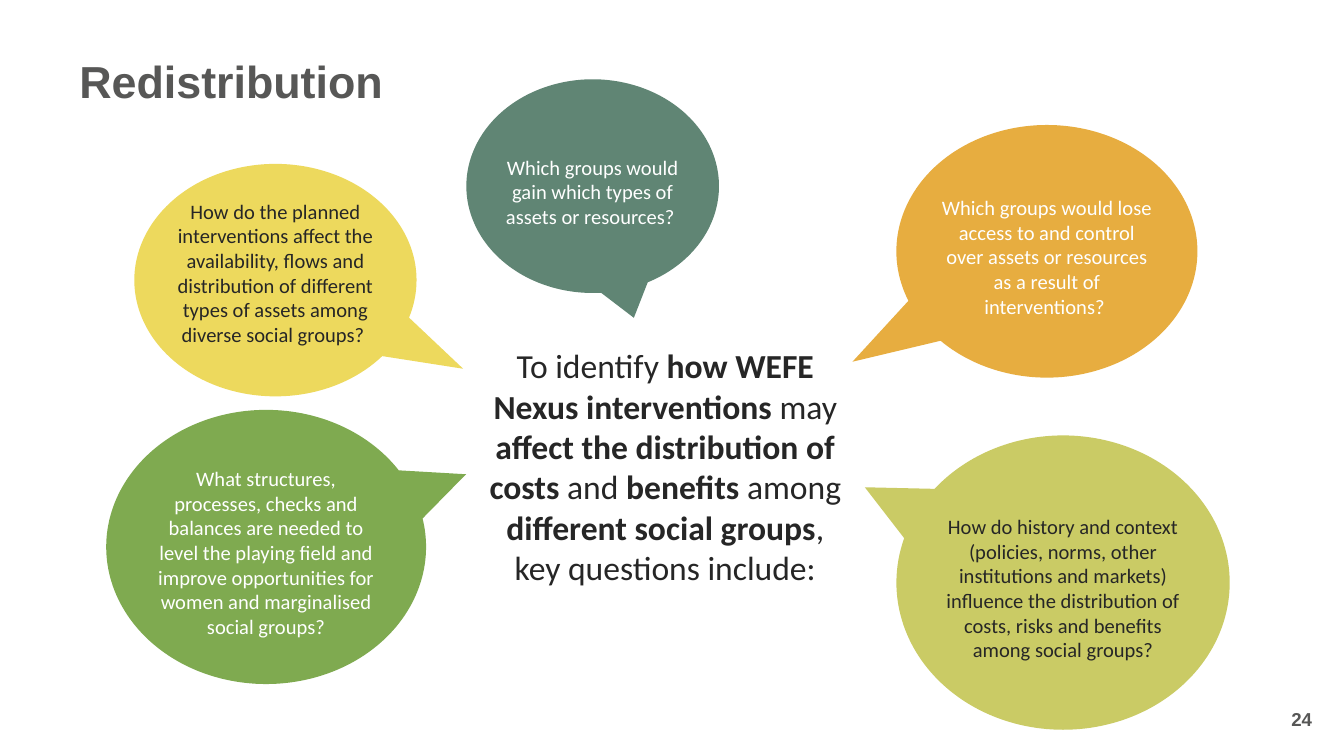
from pptx import Presentation
from pptx.dml.color import RGBColor
from pptx.enum import shapes, text
from pptx.util import Inches, Pt

GREY = RGBColor(0x57, 0x57, 0x56)
DARK = RGBColor(0x26, 0x26, 0x26)
WHITE = RGBColor(0xFF, 0xFF, 0xFF)
GREEN = RGBColor(0x7F, 0xAA, 0x50)
YELLOW = RGBColor(0xED, 0xD9, 0x5D)
TEAL = RGBColor(0x60, 0x85, 0x74)
ORANGE = RGBColor(0xE7, 0xAD, 0x40)
LIME = RGBColor(0xCA, 0xCB, 0x65)

MID = text.MSO_ANCHOR.MIDDLE
TOP = text.MSO_ANCHOR.TOP
LEFT, CENTER, RIGHT = text.PP_ALIGN.LEFT, text.PP_ALIGN.CENTER, text.PP_ALIGN.RIGHT


def place(shape, box):
    for side, size in zip(("left", "top", "width", "height"), box):
        setattr(shape, side, Inches(size))


def write(shape, runs, align, anchor, color, font):
    """Fill a shape with one paragraph of (words, bold) runs."""
    frame = shape.text_frame
    frame.word_wrap = True
    frame.vertical_anchor = anchor
    para = frame.paragraphs[0]
    para.alignment = align
    for words, bold in runs:
        run = para.add_run()
        run.text = words
        run.font.color.rgb = color
        for key, value in {**font, "bold": bold}.items():
            setattr(run.font, key, value)
    return para


# Widescreen 16:9 slide
prs = Presentation()
prs.slide_width = Inches(10)
prs.slide_height = Inches(10 * 9 / 16)
slide = prs.slides.add_slide(prs.slide_layouts[5])

# Title
title = slide.shapes.title
place(title, (0.49, 0.32, 9.37, 0.6))
para = write(title, [("Redistribution", True)], LEFT, MID, GREY,
             {"name": "Arial", "size": Pt(24)})
para.line_spacing = 0.95

# Slide number
num = slide.shapes.add_textbox(0, 0, 0, 0)
place(num, (7.61, 5.2, 2.25, 0.3))
write(num, [("24", True)], RIGHT, MID, GREY, {"name": "Arial", "size": Pt(10)})

# Central statement
core = slide.shapes.add_textbox(0, 0, 0, 0)
place(core, (3.49, 2.52, 2.92, 1.92))
write(core, [
    ("To identify ", False),
    ("how WEFE Nexus interventions", True),
    (" may ", False),
    ("affect the distribution of costs ", True),
    ("and ", False),
    ("benefits", True),
    (" among ", False),
    ("different social groups", True),
    (", key questions include:", False),
], CENTER, TOP, DARK, {"name": "Calibri", "size": Pt(18)})

# Question bubbles: box, pointer tip, fill, text colour, bottom inset, words
bubbles = [
    ((0.79, 3.05, 2.38, 2.04), (0.625, -0.265), GREEN, WHITE, 0,
     "What structures, processes, checks and balances are needed to level the "
     "playing field and improve opportunities for women and marginalised "
     "social groups?"),
    ((1, 1.22, 2.1, 1.73), (0.665, 0.381), YELLOW, DARK, 0.19,
     "How do the planned interventions affect the availability, flows and "
     "distribution of different types of assets among diverse social groups? "),
    ((3.47, 0.59, 1.88, 1.59), (0.163, 0.616), TEAL, WHITE, 0,
     "Which groups would gain which types of assets or resources? "),
    ((6.67, 0.93, 2.24, 1.88), (-0.646, 0.437), ORANGE, WHITE, 0,
     "Which groups would lose access to and control over assets or resources "
     "as a result of interventions? "),
    ((6.67, 3.24, 2.48, 2.19), (-0.595, -0.324), LIME, DARK, 0,
     "How do history and context (policies, norms, other institutions and "
     "markets) influence the distribution of costs, risks and benefits among "
     "social groups?"),
]
for box, tip, fill, color, low, words in bubbles:
    bubble = slide.shapes.add_shape(
        shapes.MSO_SHAPE.OVAL_CALLOUT, *(Inches(size) for size in box))
    bubble.adjustments[0], bubble.adjustments[1] = tip
    bubble.shadow.inherit = False
    bubble.fill.solid()
    bubble.fill.fore_color.rgb = fill
    bubble.line.fill.background()
    pads = {"left": 0, "top": 0.08, "right": 0, "bottom": low}
    for side, pad in pads.items():
        setattr(bubble.text_frame, f"margin_{side}", Inches(pad))
    write(bubble, [(words, False)], CENTER, MID, color,
          {"name": "Calibri", "size": Pt(11)})

prs.save("out.pptx")
